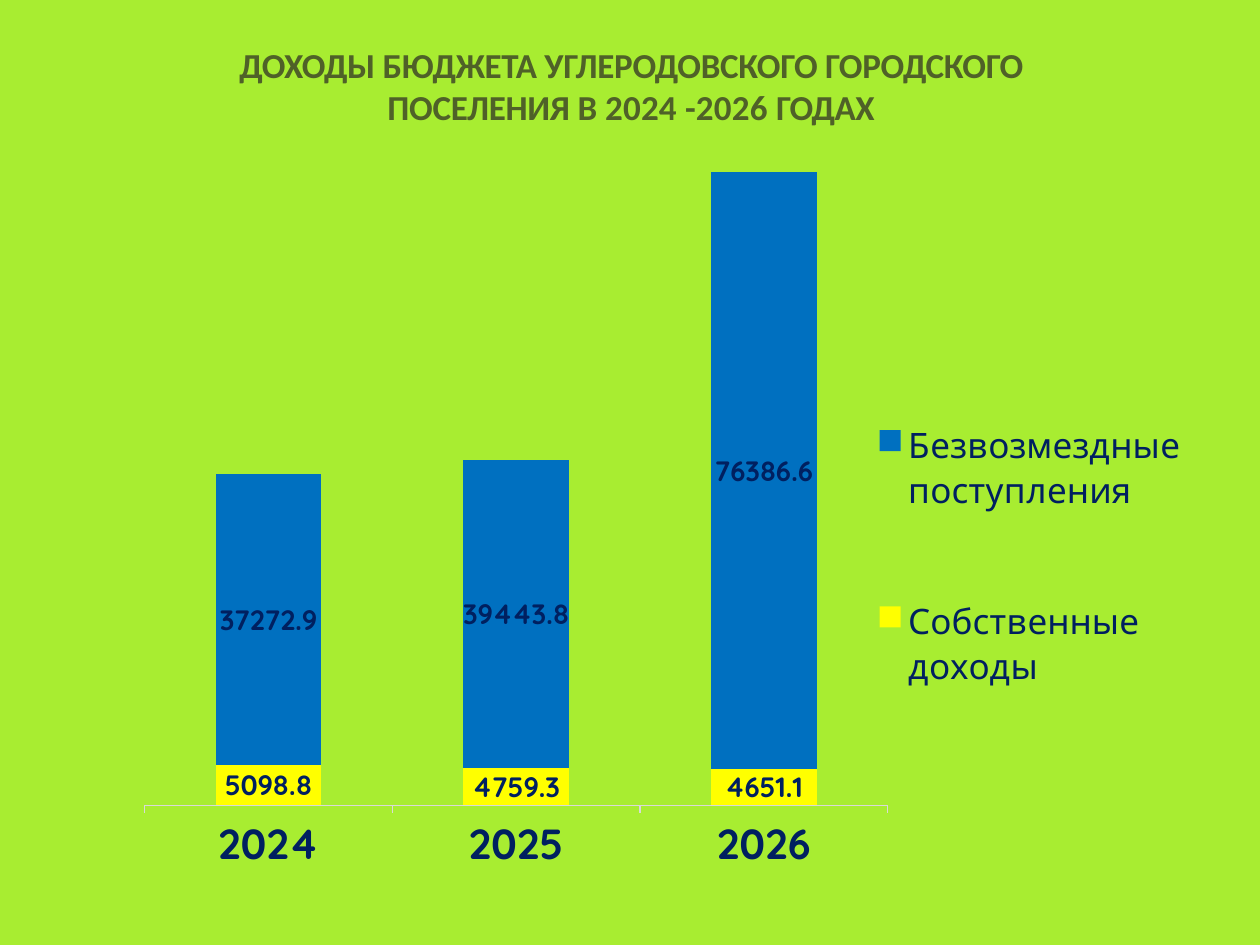
from lxml import etree
from pptx import Presentation
from pptx.chart.data import CategoryChartData
from pptx.dml.color import RGBColor
from pptx.enum.chart import XL_CHART_TYPE, XL_LABEL_POSITION, XL_LEGEND_POSITION, XL_TICK_LABEL_POSITION, XL_TICK_MARK
from pptx.enum.shapes import MSO_SHAPE
from pptx.enum.text import PP_ALIGN
from pptx.oxml.ns import qn
from pptx.util import Pt

STACKED = XL_CHART_TYPE.COLUMN_STACKED
LABEL_CENTER = XL_LABEL_POSITION.CENTER
LEGEND_RIGHT = XL_LEGEND_POSITION.RIGHT
NO_LABELS = XL_TICK_LABEL_POSITION.NONE
TICK_OUTSIDE, TICK_NONE = XL_TICK_MARK.OUTSIDE, XL_TICK_MARK.NONE
RECTANGLE = MSO_SHAPE.RECTANGLE
CENTER = PP_ALIGN.CENTER

EMU_PER_PX = 914400 / 126
COLORS = {"page": "A8ED31", "title": "4F6128", "navy": "002060",
          "own": "FFFF00", "grants": "0070C0", "axis": "D9D9D9"}

# Title pieces with their letter spacing in points
TITLE = [("ДОХОДЫ ", -0.3), ("БЮДЖЕТА УГЛЕРОДОВСКОГО ГОРОДСКОГО ПОСЕЛЕНИЯ ", -0.2),
         ("В ", 0), ("2024 -2026 ", 0.1), ("ГОДАХ", -0.4)]
YEARS = ["2024", "2025", "2026"]
INCOME = [("Собственные доходы", "own", [5098.8, 4759.3, 4651.1]),
          ("Безвозмездные поступления", "grants", [37272.9, 39443.8, 76386.6])]


def px(*lengths):
    return [round(length * EMU_PER_PX) for length in lengths]


def color(name):
    return RGBColor.from_string(COLORS[name])


def set_font(font, size, bold=False, name="Quicksand", tint="navy"):
    font.size, font.bold, font.name = Pt(size), bold, name
    font.color.rgb = color(tint)


def add_background(page, width, height):
    box = page.shapes.add_shape(RECTANGLE, 0, 0, width, height)
    box.shadow.inherit = False
    box.fill.solid()
    box.fill.fore_color.rgb = color("page")
    box.line.fill.background()


def add_text(page, pieces, left, top, width, height, **font_format):
    frame = page.shapes.add_textbox(*px(left, top, width, height)).text_frame
    frame.word_wrap = True
    frame.margin_left = frame.margin_right = frame.margin_bottom = 0
    frame.margin_top = Pt(1)
    para = frame.paragraphs[0]
    para.alignment = CENTER
    for text, spacing in pieces:
        span = para.add_run()
        span.text = text
        set_font(span.font, **font_format)
        span.font._element.set("spc", str(round(spacing * 100)))


def set_layout(element, before, inner=False, **fractions):
    """Place a chart part by fractions of the chart's size."""
    for old in element.findall(qn("c:layout")):
        element.remove(old)
    layout = etree.Element(qn("c:layout"))
    manual = etree.SubElement(layout, qn("c:manualLayout"))
    values = {"layoutTarget": "inner"} if inner else {}
    values.update(xMode="edge", yMode="edge", **fractions)
    for tag, value in values.items():
        etree.SubElement(manual, qn(f"c:{tag}")).set("val", str(value))
    if before is None:
        element.insert(0, layout)
    else:
        element.find(qn(before)).addnext(layout)


def style_series(series, tint):
    series.format.fill.solid()
    series.format.fill.fore_color.rgb = color(tint)
    labels = series.data_labels
    labels.show_value = True
    labels.position = LABEL_CENTER
    labels.number_format, labels.number_format_is_linked = "0.0", False
    set_font(labels.font, 16, bold=True)


def style_axes(chart):
    years = chart.category_axis
    years.major_tick_mark = TICK_OUTSIDE
    years.format.line.color.rgb = color("axis")
    years.format.line.width = Pt(0.75)
    set_font(years.tick_labels.font, 24, bold=True)

    amounts = chart.value_axis
    amounts.minimum_scale, amounts.maximum_scale = 0, 81400
    amounts.has_major_gridlines = False
    amounts.major_tick_mark = TICK_NONE
    amounts.tick_label_position = NO_LABELS
    amounts.visible = False


def add_income_chart(page, left, top, width, height):
    data = CategoryChartData(number_format="0.0")
    data.categories = YEARS
    for name, _, values in INCOME:
        data.add_series(name, values)
    chart = page.shapes.add_chart(STACKED, *px(left, top, width, height), data).chart
    chart.has_title = False
    set_font(chart.font, 10)

    # Columns
    plot = chart.plots[0]
    plot.gap_width, plot.overlap = 134, 100
    plot.vary_by_categories = False
    for series, (_, tint, _) in zip(plot.series, INCOME):
        style_series(series, tint)
    style_axes(chart)

    # Legend
    chart.has_legend = True
    legend = chart.legend
    legend.position = LEGEND_RIGHT
    legend.include_in_layout = False
    set_font(legend.font, 20)

    set_layout(legend._element, "c:legendPos", x=0.7, y=0.27, w=0.3, h=0.59)
    plot_area = chart._chartSpace.chart.plotArea
    set_layout(plot_area, None, inner=True, x=0.046, y=0.046, w=0.675, h=0.854)


def main():
    deck = Presentation()
    deck.slide_width, deck.slide_height = px(1260, 945)
    page = deck.slides.add_slide(deck.slide_layouts[6])
    add_background(page, deck.slide_width, deck.slide_height)
    add_text(page, TITLE, 173, 42, 916, 87, size=20, bold=True, name="Calibri", tint="title")
    add_income_chart(page, 94, 135, 1101, 745)
    deck.save("out.pptx")


if __name__ == "__main__":
    main()
